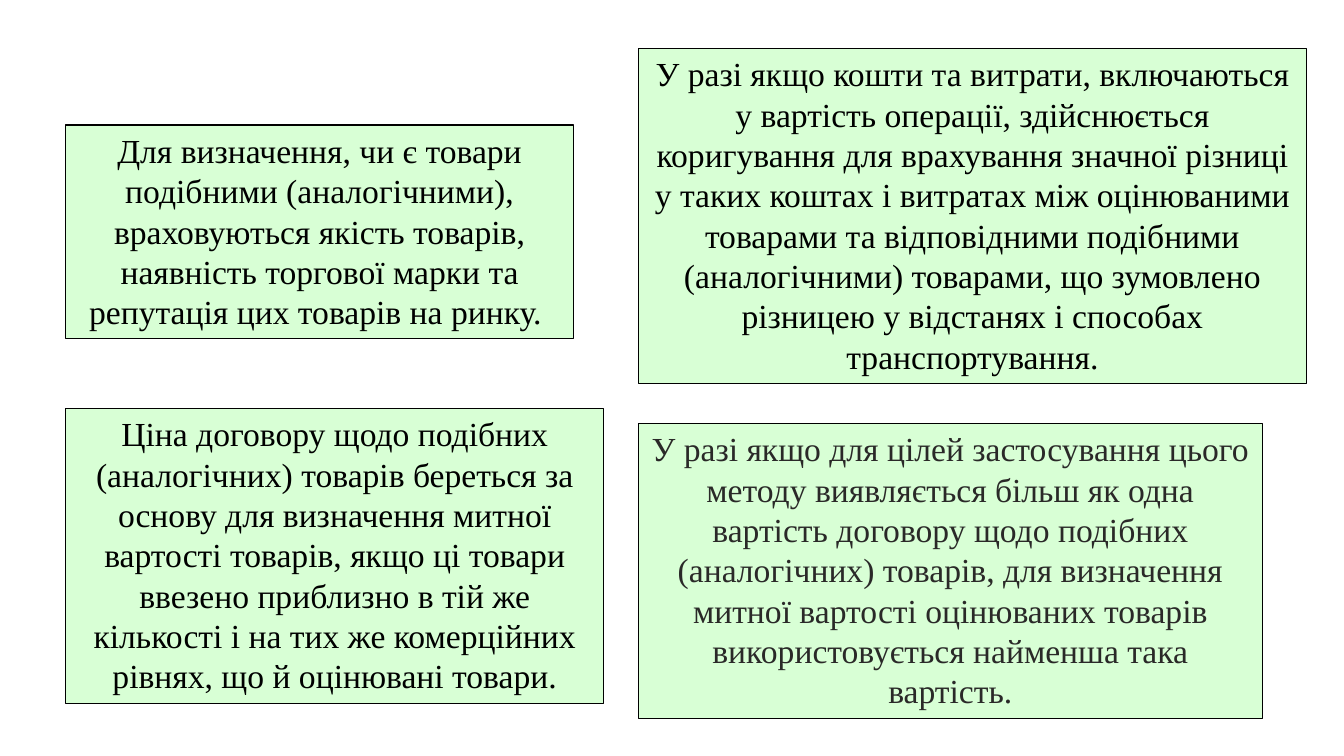
from dataclasses import dataclass

from pptx import Presentation
from pptx.dml.color import RGBColor
from pptx.enum.shapes import MSO_SHAPE
from pptx.enum.text import MSO_ANCHOR, MSO_AUTO_SIZE, PP_ALIGN
from pptx.util import Emu, Pt

RECTANGLE = MSO_SHAPE.RECTANGLE
TOP = MSO_ANCHOR.TOP
GROW = MSO_AUTO_SIZE.SHAPE_TO_FIT_TEXT
CENTER = PP_ALIGN.CENTER

BLACK = RGBColor(0x00, 0x00, 0x00)
CHARCOAL = RGBColor(0x2A, 0x29, 0x28)
PALE_GREEN = RGBColor(0xD8, 0xFF, 0xD5)

EMU_PER_PX = 9144  # 100 px to the inch
LEFT_COLUMN = 65
RIGHT_COLUMN = 633


@dataclass(frozen=True)
class Card:
    left: int
    top: int
    width: int
    height: int
    text: str
    color: RGBColor = BLACK


CARDS = [
    Card(LEFT_COLUMN, 124, 504, 212,
         "Для визначення, чи є товари подібними (аналогічними), "
         "враховуються якість товарів, наявність торгової марки та "
         "репутація цих товарів на ринку. "),
    Card(LEFT_COLUMN, 405, 534, 293,
         "Ціна договору щодо подібних (аналогічних) товарів береться за "
         "основу для визначення митної вартості товарів, якщо ці товари "
         "ввезено приблизно в тій же кількості і на тих же комерційних "
         "рівнях, що й оцінювані товари."),
    Card(RIGHT_COLUMN, 420, 619, 293,
         "У разі якщо для цілей застосування цього методу виявляється "
         "більш як одна вартість договору щодо подібних (аналогічних) "
         "товарів, для визначення митної вартості оцінюваних товарів "
         "використовується найменша така вартість.", CHARCOAL),
    Card(RIGHT_COLUMN, 48, 663, 333,
         "У разі якщо кошти та витрати, включаються у вартість операції, "
         "здійснюється коригування для врахування значної різниці у таких "
         "коштах і витратах між оцінюваними товарами та відповідними "
         "подібними (аналогічними) товарами, що зумовлено різницею у "
         "відстанях і способах транспортування."),
]


def px(length: int) -> Emu:
    return Emu(length * EMU_PER_PX)


def write_text(shape, text: str, *, color: RGBColor, size: int = 24,
               font_name: str = "Times New Roman") -> None:
    frame = shape.text_frame
    frame.word_wrap = True
    frame.auto_size = GROW
    frame.vertical_anchor = TOP
    paragraph = frame.paragraphs[0]
    paragraph.alignment = CENTER
    run = paragraph.add_run()
    run.text = text
    run.font.name = font_name
    run.font.size = Pt(size)
    run.font.color.rgb = color


def draw_card(slide, card: Card) -> None:
    shape = slide.shapes.add_shape(
        RECTANGLE, px(card.left), px(card.top), px(card.width), px(card.height))
    shape.shadow.inherit = False
    shape.fill.solid()
    shape.fill.fore_color.rgb = PALE_GREEN
    shape.line.color.rgb = BLACK
    shape.line.width = Pt(0.75)
    write_text(shape, card.text, color=card.color)


def main() -> None:
    presentation = Presentation()
    presentation.slide_width = px(1333)
    presentation.slide_height = px(750)
    slide = presentation.slides.add_slide(presentation.slide_layouts[6])

    # Four text cards in two columns
    for card in CARDS:
        draw_card(slide, card)

    presentation.save("out.pptx")


if __name__ == "__main__":
    main()
